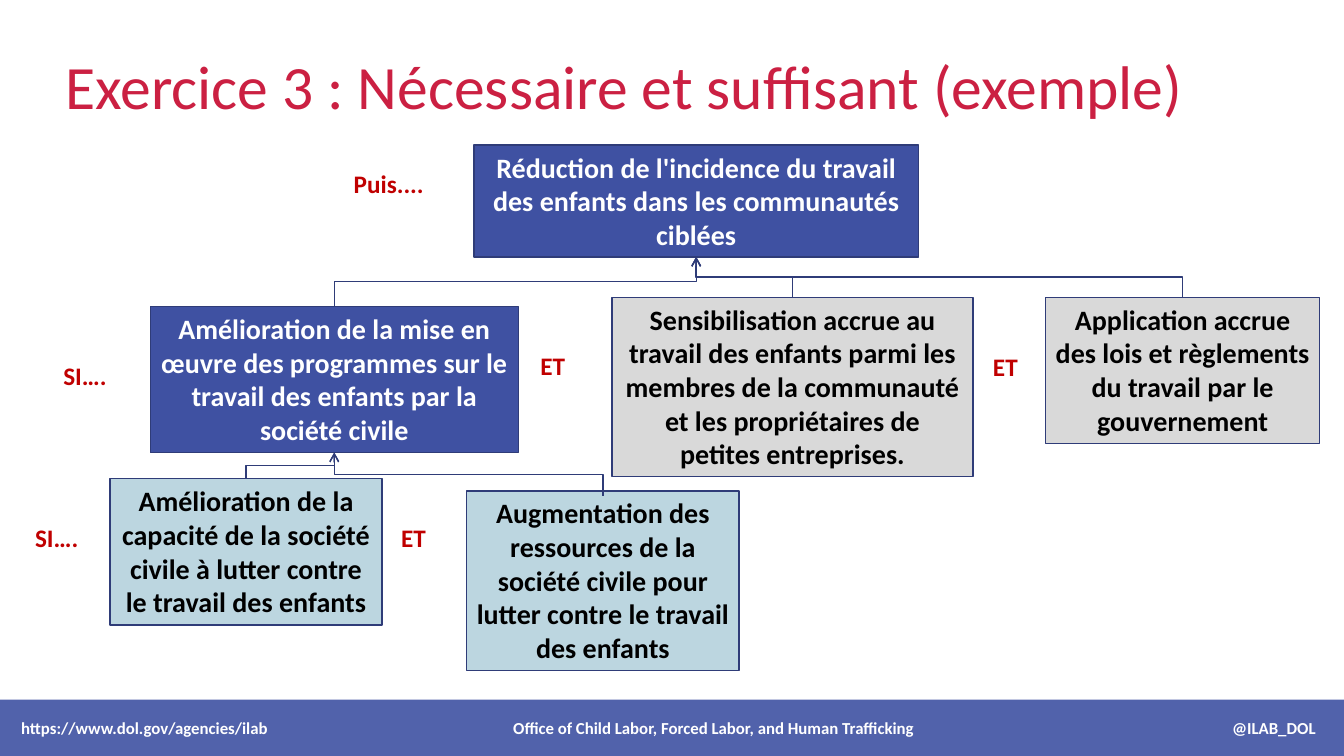
from lxml import etree
from pptx import Presentation
from pptx.dml.color import RGBColor
from pptx.enum import shapes, text
from pptx.oxml import ns
from pptx.util import Inches, Pt

CRIMSON = RGBColor(0xCB, 0x20, 0x42)
INDIGO = RGBColor(0x3F, 0x51, 0xA2)
NAVY = RGBColor(0x2F, 0x3C, 0x78)
GREY = RGBColor(0xD9, 0xD9, 0xD9)
PALE_BLUE = RGBColor(0xBC, 0xD6, 0xE0)
RED = RGBColor(0xC0, 0x00, 0x00)
WHITE = RGBColor(0xFF, 0xFF, 0xFF)
BLACK = RGBColor(0x00, 0x00, 0x00)

# Result boxes: left, top, width, height, fill, font colour, wording
RESULTS = {
    "goal": (4.7, 1.44, 4.41, 1.11, INDIGO, WHITE,
             "Réduction de l'incidence du travail des enfants dans les "
             "communautés ciblées"),
    "programmes": (1.49, 3.04, 3.65, 1.45, INDIGO, WHITE,
                   "Amélioration de la mise en œuvre des programmes sur le "
                   "travail des enfants par la société civile"),
    "awareness": (6.07, 2.95, 3.58, 1.78, GREY, BLACK,
                  "Sensibilisation accrue au travail des enfants parmi les "
                  "membres de la communauté et les propriétaires de petites "
                  "entreprises."),
    "enforcement": (10.37, 2.95, 2.72, 1.45, GREY, BLACK,
                    "Application accrue des lois et règlements du travail "
                    "par le gouvernement"),
    "capacity": (1.09, 4.75, 2.7, 1.45, PALE_BLUE, BLACK,
                 "Amélioration de la capacité de la société civile à lutter "
                 "contre le travail des enfants"),
    "resources": (4.63, 4.87, 2.7, 1.78, PALE_BLUE, BLACK,
                  "Augmentation des ressources de la société civile pour "
                  "lutter contre le travail des enfants"),
}

# Contributing result, result it leads to, start below the box top
LINKS = [("programmes", "goal", 0), ("awareness", "goal", 0),
         ("enforcement", "goal", 0), ("capacity", "programmes", 0),
         ("resources", "programmes", 0.05)]

# Logic words: left, top, width, wording
LOGIC_WORDS = [(3.88, 5.13, 0.51, "ET"), (5.26, 3.43, 0.51, "ET"),
               (9.75, 3.44, 0.45, "ET"), (0.25, 5.13, 0.63, "SI…."),
               (0.53, 3.53, 0.63, "SI…."), (3.41, 1.62, 0.9, "Puis....")]

FOOTER = ["https://www.dol.gov/agencies/ilab",
          "Office of Child Labor, Forced Labor, and Human Trafficking",
          "@ILAB_DOL"]


def write(frame, wording, size, colour, bold=True, align=text.PP_ALIGN.LEFT):
    frame.text = wording
    paragraph = frame.paragraphs[0]
    paragraph.alignment = align
    font = paragraph.runs[0].font
    font.name, font.size, font.bold = "Calibri", Pt(size), bold
    font.color.rgb = colour
    return paragraph


def add_title(slide, left, top, width, height):
    title = slide.shapes.title
    title.left, title.top = Inches(left), Inches(top)
    title.width, title.height = Inches(width), Inches(height)
    frame = title.text_frame
    frame.auto_size = text.MSO_AUTO_SIZE.NONE
    frame.vertical_anchor = text.MSO_ANCHOR.MIDDLE
    write(frame, "Exercice 3 : Nécessaire et suffisant (exemple)", 44,
          CRIMSON, bold=False)


def add_rectangle(slide, left, top, width, height, fill):
    rectangle = slide.shapes.add_shape(
        shapes.MSO_SHAPE.RECTANGLE, Inches(left), Inches(top),
        Inches(width), Inches(height))
    rectangle.shadow.inherit = False
    rectangle.fill.solid()
    rectangle.fill.fore_color.rgb = fill
    return rectangle


def add_result(slide, left, top, width, height, fill, colour, wording):
    result = add_rectangle(slide, left, top, width, height, fill)
    result.line.color.rgb = NAVY
    result.line.width = Pt(1)
    frame = result.text_frame
    frame.word_wrap = True
    frame.vertical_anchor = text.MSO_ANCHOR.TOP
    write(frame, wording, 20, colour, align=text.PP_ALIGN.CENTER)


def add_link(slide, cause, effect, drop):
    """Bent arrow from the top of the cause to the bottom of the effect."""
    start_x, start_y = cause[0] + cause[2] / 2, cause[1] + drop
    end_x, end_y = effect[0] + effect[2] / 2, effect[1] + effect[3]
    mid_x, mid_y = (start_x + end_x) / 2, (start_y + end_y) / 2
    # Laid out on its side, then turned so that both ends run vertically
    side = 1 if start_x < end_x else -1
    half_rise = side * (start_y - end_y) / 2
    half_run = abs(end_x - start_x) / 2
    link = slide.shapes.add_connector(
        shapes.MSO_CONNECTOR.ELBOW,
        Inches(mid_x + half_rise), Inches(mid_y + half_run),
        Inches(mid_x - half_rise), Inches(mid_y - half_run))
    link.line.color.rgb = NAVY
    link.line.width = Pt(1)
    properties = link.element.spPr
    properties.find(ns.qn("a:xfrm")).set("rot", str(side * 90 % 360 * 60000))
    etree.SubElement(properties.find(ns.qn("a:ln")), ns.qn("a:tailEnd"),
                     type="arrow")
    etree.SubElement(properties, ns.qn("a:effectLst"))


def add_logic_word(slide, left, top, width, wording):
    label = slide.shapes.add_textbox(Inches(left), Inches(top),
                                     Inches(width), Inches(0.4))
    label.text_frame.word_wrap = False
    write(label.text_frame, wording, 18, RED)


def add_footer(slide, left, top, width, height):
    bar = add_rectangle(slide, left, top, width, height, INDIGO)
    bar.line.fill.background()
    colour = bar.element.spPr.find(ns.qn("a:solidFill"))[0]
    etree.SubElement(colour, ns.qn("a:alpha"), val="90000")
    frame = bar.text_frame
    frame.word_wrap = True
    frame.margin_left = Inches(0.21)
    frame.vertical_anchor = text.MSO_ANCHOR.MIDDLE
    paragraph = write(frame, "\t".join(FOOTER), 12, WHITE)
    # Tab stops for the middle and right-hand entries
    tabs = etree.SubElement(paragraph._p.get_or_add_pPr(), ns.qn("a:tabLst"))
    for position, kind in ((6.87, "ctr"), (12.84, "r")):
        etree.SubElement(tabs, ns.qn("a:tab"), pos=str(Inches(position)),
                         algn=kind)


def main():
    deck = Presentation()
    deck.slide_width, deck.slide_height = Inches(13.33), Inches(7.5)
    slide = deck.slides.add_slide(deck.slide_layouts[5])
    add_title(slide, 0.55, 0.53, 12.61, 0.62)
    for result in RESULTS.values():
        add_result(slide, *result)
    for cause, effect, drop in LINKS:
        add_link(slide, RESULTS[cause], RESULTS[effect], drop)
    for word in LOGIC_WORDS:
        add_logic_word(slide, *word)
    add_footer(slide, 0, 6.94, 13.37, 0.56)
    deck.save("out.pptx")


if __name__ == "__main__":
    main()
